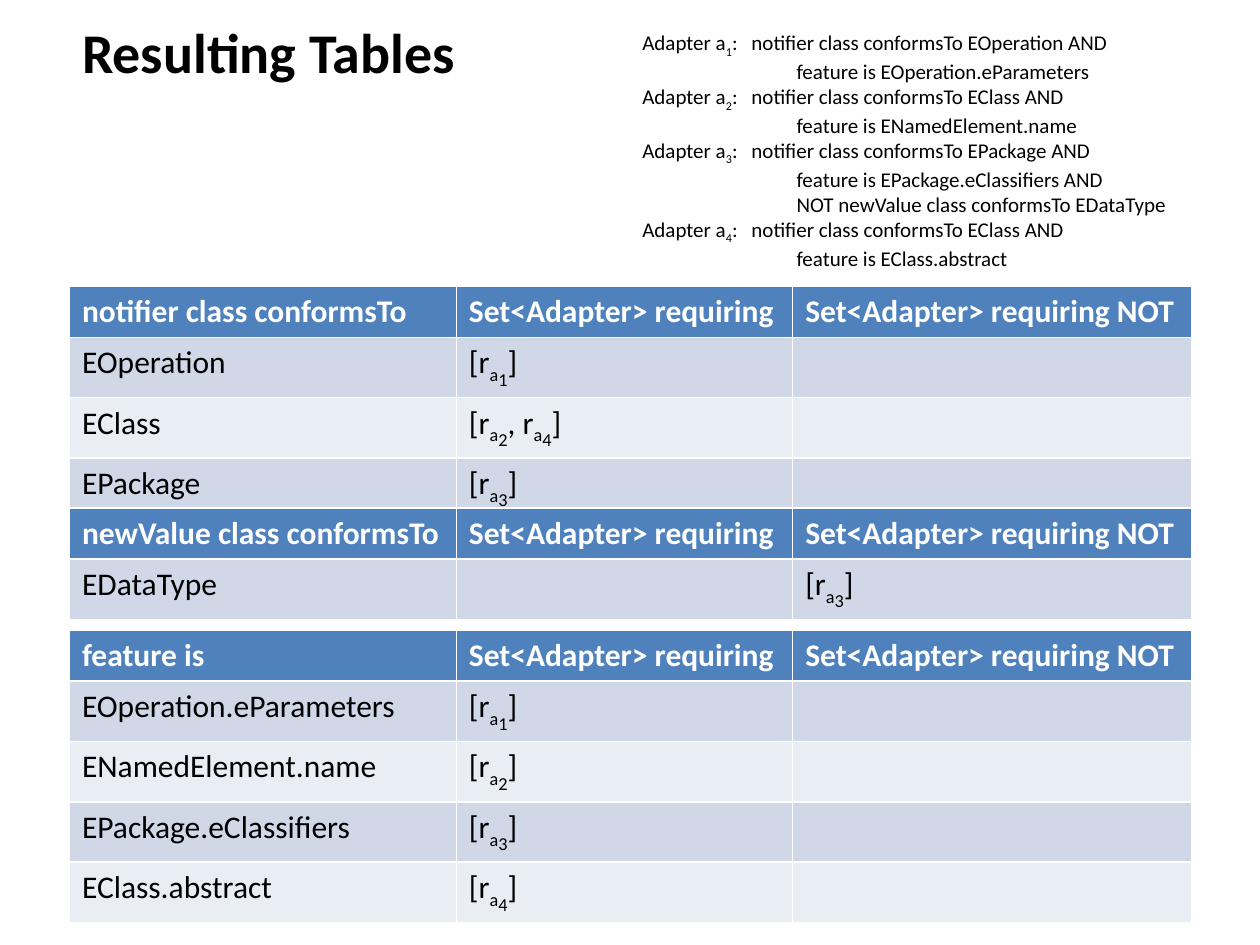
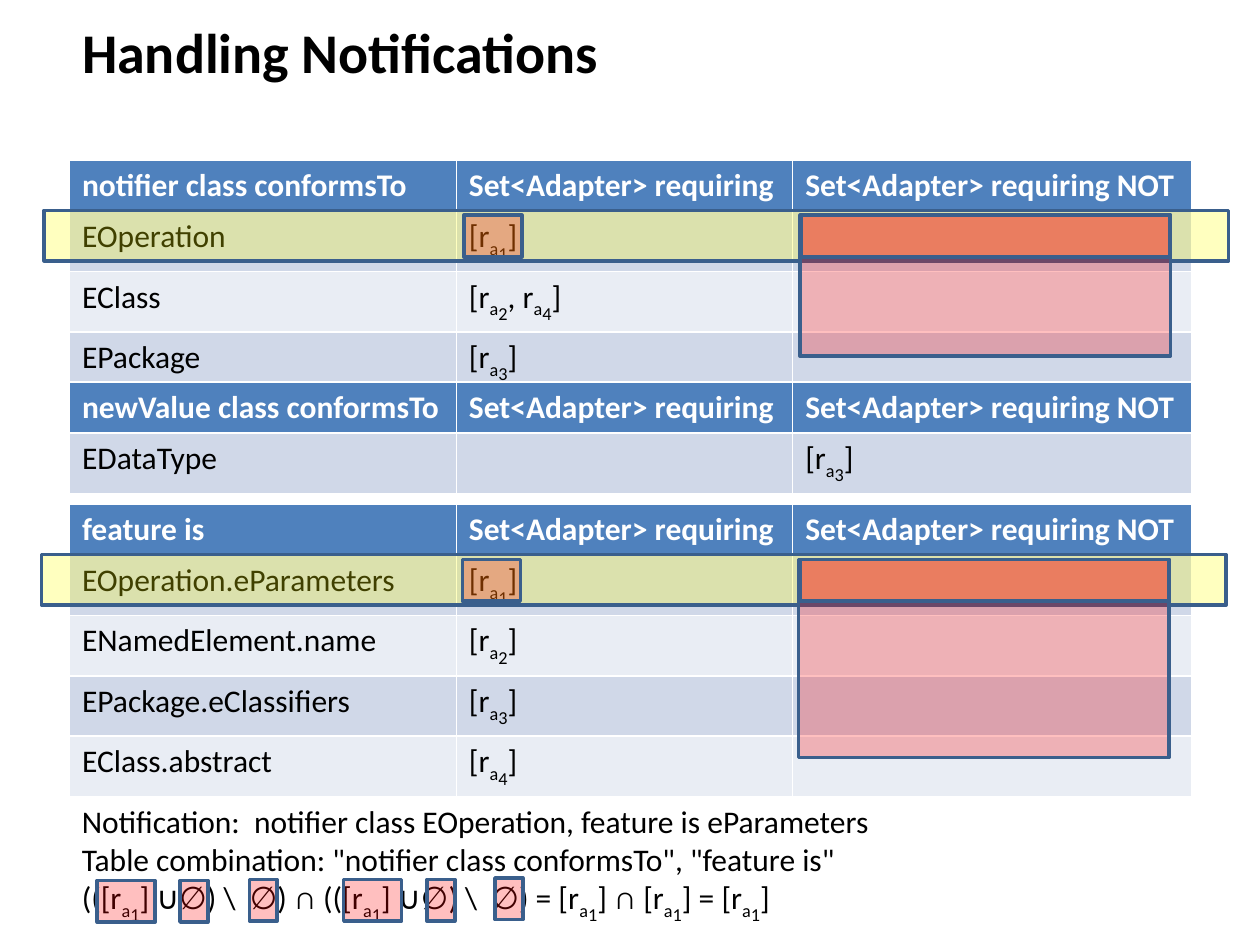
from lxml.etree import SubElement
from pptx import Presentation
from pptx.dml.color import RGBColor
from pptx.enum.shapes import MSO_SHAPE as Shape
from pptx.enum.text import MSO_ANCHOR as Anchor, MSO_AUTO_SIZE as AutoSize, PP_ALIGN as Align
from pptx.oxml.ns import qn
from pptx.util import Cm, Pt

BLACK, WHITE = "000000", "FFFFFF"
HEADER_BLUE, ROW_FILLS = "4F81BD", ("D0D8E8", "E9EDF4")
OUTLINE, YELLOW, RED = "3A5F8C", "FFFF00", "FF0000"
TITLE_ONLY = 5
LEFT = 1.4
COLUMN_WIDTHS = (7.8, 6.78, 8.05)
ROW_HEIGHT = 1.03
LINE_HEIGHT = 1.02
# A marker lowers the one character that follows it
BASELINES = {"_": -25000, "~": -40000}

# Offset below the first table, what is tested, and rows of (value, requiring, requiring NOT)
TABLES = [
    (0, "notifier class conformsTo", [
        ("EOperation", "[r_a~1]", ""),
        ("EClass", "[r_a~2, r_a~4]", ""),
        ("EPackage", "[r_a~3]", "")]),
    (6.93, "feature is", [
        ("EOperation.eParameters", "[r_a~1]", ""),
        ("ENamedElement.name", "[r_a~2]", ""),
        ("EPackage.eClassifiers", "[r_a~3]", ""),
        ("EClass.abstract", "[r_a~4]", "")]),
    (4.47, "newValue class conformsTo", [
        ("EDataType", "", "[r_a~3]")]),
]

ADAPTERS = [
    ("notifier class conformsTo EOperation AND", "feature is EOperation.eParameters"),
    ("notifier class conformsTo EClass AND", "feature is ENamedElement.name"),
    ("notifier class conformsTo EPackage AND", "feature is EPackage.eClassifiers AND",
     "NOT newValue class conformsTo EDataType"),
    ("notifier class conformsTo EClass AND", "feature is EClass.abstract"),
]
CONDITION_TAB, CONDITION_INDENT = 2.2, 3.11

EXPLANATION = [
    (16.59, "Notification:  notifier class EOperation, feature is eParameters"),
    (15.82, 'Table combination: "notifier class conformsTo", "feature is"'),
    (14.78, "(([r_a~1] ∪∅) \\  ∅) ∩ (([r_a~1] ∪∅) \\  ∅) = [r_a~1] ∩ [r_a~1] = [r_a~1]"),
]
EXPLANATION_TOP, EXPLANATION_STEP = 16.05, 0.76

MATCHED_ROWS = [(0.89, 4.24), (0.84, 11.18)]
SET_WIDTH, EMPTY_WIDTH, MARK_HEIGHT = 1.17, 0.56, 0.84
# Each term of the formula with the table cells it comes from
TERM_SOURCES = [
    ((1.96, 17.75, SET_WIDTH, MARK_HEIGHT), (9.35, 4.34, SET_WIDTH, MARK_HEIGHT)),
    ((3.63, 17.75, EMPTY_WIDTH, MARK_HEIGHT), (16.13, 4.34, 7.47, 2.84)),
    ((5.03, 17.73, EMPTY_WIDTH, MARK_HEIGHT), (16.15, 4.34, 7.44, MARK_HEIGHT)),
    ((6.93, 17.73, SET_WIDTH, MARK_HEIGHT), (9.32, 11.28, SET_WIDTH, MARK_HEIGHT)),
    ((8.61, 17.73, EMPTY_WIDTH, MARK_HEIGHT), (16.1, 11.28, 7.47, 3.99)),
    ((9.98, 17.7, EMPTY_WIDTH, MARK_HEIGHT), (16.13, 11.28, 7.44, MARK_HEIGHT)),
]


def rgb(hex_color):
    return RGBColor.from_string(hex_color)


def set_format(target, values):
    for attribute, value in values.items():
        setattr(target, attribute, value)


def split_markers(text):
    """Yield (piece, baseline) for text with baseline markers."""
    piece, baseline = "", 0
    for char in text:
        if char in BASELINES:
            if piece:
                yield piece, 0
            piece, baseline = "", BASELINES[char]
        elif baseline:
            yield char, baseline
            baseline = 0
        else:
            piece += char
    if piece:
        yield piece, 0


class Deck:
    font = "Calibri"

    def __init__(self):
        self.presentation = Presentation()
        set_format(self.presentation, {"slide_width": Cm(25.4), "slide_height": Cm(19.05)})
        self.slide = None

    def add_runs(self, paragraph, text, size=18, color=BLACK, bold=False):
        for piece, baseline in split_markers(text):
            run = paragraph.add_run()
            run.text = piece
            set_format(run.font, {"name": self.font, "size": Pt(size), "bold": bold})
            run.font.color.rgb = rgb(color)
            if baseline:
                run.font._element.set("baseline", str(baseline))

    def add_slide(self, title, width):
        layout = self.presentation.slide_layouts[TITLE_ONLY]
        self.slide = self.presentation.slides.add_slide(layout)
        heading = self.slide.shapes.title
        set_format(heading, {"left": Cm(LEFT), "top": Cm(0.23),
                             "width": Cm(width), "height": Cm(1.63)})
        set_format(heading.text_frame, {"word_wrap": False, "vertical_anchor": Anchor.TOP,
                                        "auto_size": AutoSize.SHAPE_TO_FIT_TEXT})
        paragraph = heading.text_frame.paragraphs[0]
        paragraph.alignment = Align.LEFT
        self.add_runs(paragraph, title, size=32, bold=True)

    def add_text(self, left, top, width, height):
        """Return the frame of a new text box that does not wrap."""
        frame = self.slide.shapes.add_textbox(Cm(left), Cm(top), Cm(width), Cm(height)).text_frame
        set_format(frame, {"word_wrap": False, "auto_size": AutoSize.SHAPE_TO_FIT_TEXT})
        return frame

    def add_table(self, top, condition, rows):
        header = (condition, "Set<Adapter> requiring", "Set<Adapter> requiring NOT")
        lines = [header, *rows]
        table = self.slide.shapes.add_table(
            len(lines), len(header), Cm(LEFT), Cm(top),
            Cm(sum(COLUMN_WIDTHS)), Cm(ROW_HEIGHT * len(lines))).table
        for column, width in zip(table.columns, COLUMN_WIDTHS):
            column.width = Cm(width)
        for r, line in enumerate(lines):
            table.rows[r].height = Cm(ROW_HEIGHT)
            for c, text in enumerate(line):
                cell = table.cell(r, c)
                cell.fill.solid()
                cell.fill.fore_color.rgb = rgb(ROW_FILLS[(r - 1) % 2] if r else HEADER_BLUE)
                self.add_runs(cell.text_frame.paragraphs[0], text,
                              color=BLACK if r else WHITE, bold=r == 0)

    def add_lookup_tables(self, top):
        for offset, condition, rows in TABLES:
            self.add_table(top + offset, condition, rows)

    def add_highlight(self, shapes, box, color):
        """Add a see-through marking rectangle to a slide or group."""
        mark = shapes.add_shape(Shape.RECTANGLE, *map(Cm, box))
        mark.shadow.inherit = False
        mark.fill.solid()
        mark.fill.fore_color.rgb = rgb(color)
        SubElement(mark._element.spPr.find(".//" + qn("a:srgbClr")), qn("a:alpha"), val="25000")
        mark.line.color.rgb = rgb(OUTLINE)
        mark.line.width = Pt(2)

    def add_linked_highlights(self, boxes):
        group = self.slide.shapes.add_group_shape()
        for box in boxes:
            self.add_highlight(group.shapes, box, RED)

    def add_adapters(self):
        frame = self.add_text(12.7, 0.48, 11.2, 4.88)
        paragraph = frame.paragraphs[0]
        for number, (first, *others) in enumerate(ADAPTERS, 1):
            if number > 1:
                paragraph = frame.add_paragraph()
            tabs = SubElement(paragraph._p.get_or_add_pPr(), qn("a:tabLst"))
            SubElement(tabs, qn("a:tab"), pos=str(Cm(CONDITION_TAB)), algn="l")
            self.add_runs(paragraph, f"Adapter a_{number}:\t{first}", size=12)
            for condition in others:
                paragraph = frame.add_paragraph()
                paragraph._p.get_or_add_pPr().set("marL", str(Cm(CONDITION_INDENT)))
                self.add_runs(paragraph, condition, size=12)


def main():
    deck = Deck()

    deck.add_slide("Resulting Tables", 8.1)
    deck.add_lookup_tables(5.77)
    deck.add_adapters()

    deck.add_slide("Handling Notifications", 11.05)
    deck.add_lookup_tables(3.23)
    for left, top in MATCHED_ROWS:
        deck.add_highlight(deck.slide.shapes, (left, top, 23.88, LINE_HEIGHT), YELLOW)
    for i, (width, text) in enumerate(EXPLANATION):
        frame = deck.add_text(LEFT, EXPLANATION_TOP + i * EXPLANATION_STEP, width, LINE_HEIGHT)
        deck.add_runs(frame.paragraphs[0], text)
    for boxes in TERM_SOURCES:
        deck.add_linked_highlights(boxes)

    deck.presentation.save("out.pptx")


if __name__ == "__main__":
    main()
